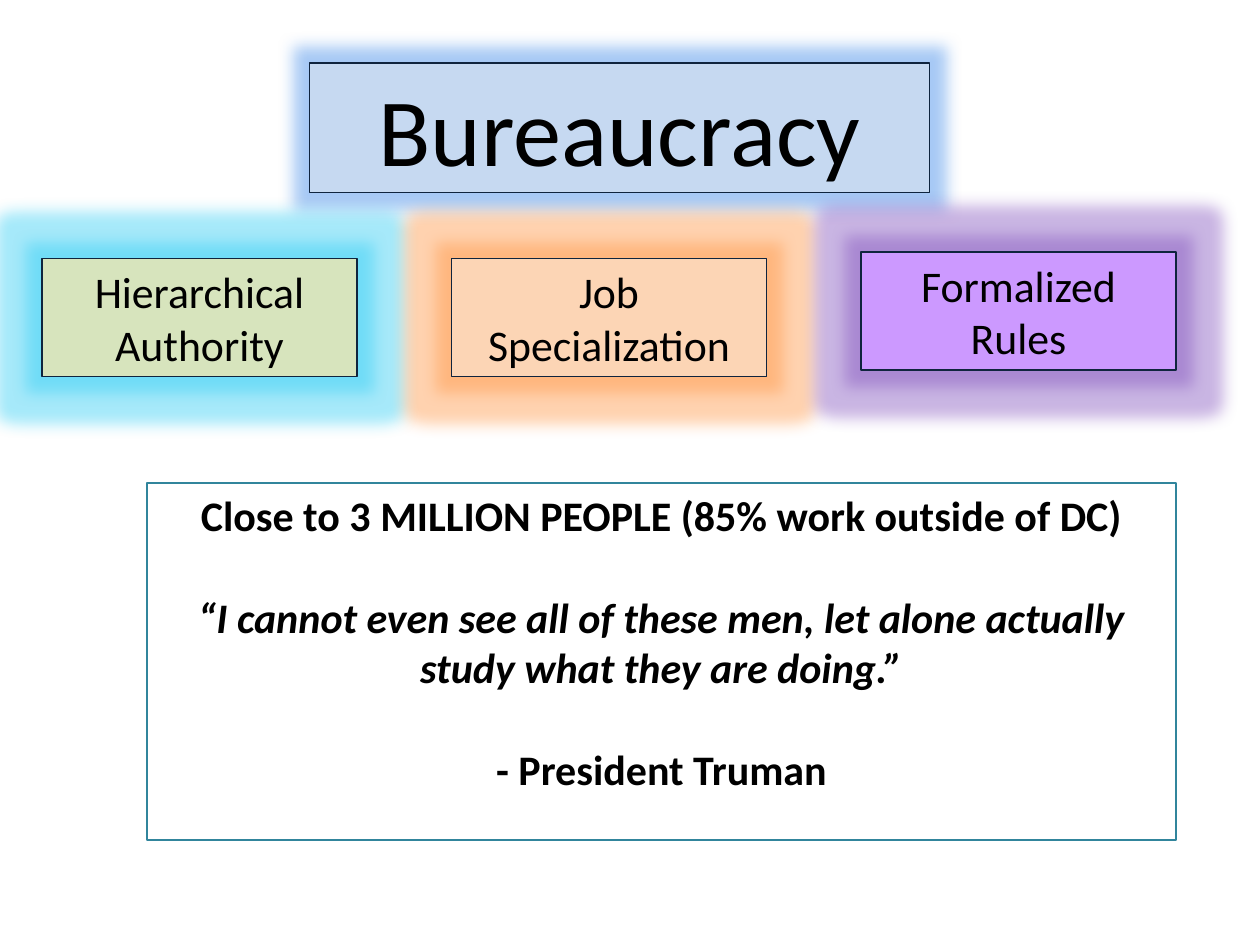
from lxml import etree
from pptx import Presentation
from pptx.dml.color import RGBColor
from pptx.enum import shapes, text
from pptx.oxml import ns
from pptx.util import Pt

# Content: lines of each box, then position, fill and glow
HEADING = dict(lines=["Bureaucracy"], at=(177, 36, 354, 74),
               fill="C6D9F1", glow="257AE6")
TRAITS = [
    dict(lines=["Hierarchical", "Authority"], top=147.6, fill="D7E4BD", glow="21CAF3"),
    dict(lines=["Job Specialization"], top=147.6, fill="FCD5B5", glow="FF8F37"),
    dict(lines=["Formalized Rules"], top=144, fill="CC99FF", glow="7A46B9"),
]
QUOTE = [
    ("Close to 3 MILLION PEOPLE (85% work outside of DC)", False),
    ("“I cannot even see all of these men, let alone actually "
     "study what they are doing.”", True),
    ("- President Truman", False),
]
QUOTE_AT = (84, 276, 588, 204)

TRAIT_LEFT, TRAIT_STEP = 24, 234
TRAIT_SIZE = (180, 67.5)
BLANK_LINE = 29.3
GLOW_RADIUS, GLOW_ALPHA = 18, 40


def rgb(value):
    return RGBColor.from_string(value)


def place(box, at, line, fill=None):
    for side, length in zip(("left", "top", "width", "height"), at):
        setattr(box, side, Pt(length))
    if fill:
        box.fill.solid()
        box.fill.fore_color.rgb = rgb(fill)
    else:
        box.fill.background()
    box.line.color.rgb = rgb(line)
    box.line.width = Pt(0.75)
    box.shadow.inherit = False


def add_glow(box, color):
    effects = box._element.spPr.find(ns.qn("a:effectLst"))
    glow = etree.SubElement(effects, ns.qn("a:glow"), rad=str(Pt(GLOW_RADIUS)))
    tint = etree.SubElement(glow, ns.qn("a:srgbClr"), val=color)
    etree.SubElement(tint, ns.qn("a:alpha"), val=str(GLOW_ALPHA * 1000))


def write(box, lines, anchor, gap=0, **font):
    """Fill a box with centred paragraphs, `gap` points apart."""
    frame = box.text_frame
    frame.word_wrap = True
    frame.auto_size = text.MSO_AUTO_SIZE.NONE
    frame.vertical_anchor = anchor
    frame.text = "\n".join(lines)
    for index, paragraph in enumerate(frame.paragraphs):
        paragraph.alignment = text.PP_ALIGN.CENTER
        paragraph.space_before = Pt(gap if index else 0)
        run_font = paragraph.runs[0].font
        run_font.color.rgb = rgb("000000")
        for name, value in dict(font, name="Calibri").items():
            setattr(run_font, name, value)


deck = Presentation()
deck.slide_width, deck.slide_height = Pt(720), Pt(540)
slide = deck.slides.add_slide(deck.slide_layouts[1])
heading, quote = slide.placeholders

# Heading
place(heading, HEADING["at"], "0F243E", HEADING["fill"])
add_glow(heading, HEADING["glow"])
write(heading, HEADING["lines"], text.MSO_ANCHOR.MIDDLE, size=Pt(55))

# Three traits in a row
for column, trait in enumerate(TRAITS):
    box = slide.shapes.add_shape(shapes.MSO_SHAPE.RECTANGLE, 0, 0, 0, 0)
    at = (TRAIT_LEFT + column * TRAIT_STEP, trait["top"], *TRAIT_SIZE)
    place(box, at, "0F243E", trait["fill"])
    add_glow(box, trait["glow"])
    write(box, trait["lines"], text.MSO_ANCHOR.MIDDLE, size=Pt(25))

# Fact and quotation
place(quote, QUOTE_AT, "31859C")
write(quote, [line for line, _ in QUOTE], text.MSO_ANCHOR.TOP,
      gap=BLANK_LINE, size=Pt(24), bold=True)
for paragraph, (_, italic) in zip(quote.text_frame.paragraphs, QUOTE):
    paragraph.runs[0].font.italic = italic
    properties = paragraph._p.get_or_add_pPr()
    properties.set("marL", "0")
    properties.set("indent", "0")
    etree.SubElement(properties, ns.qn("a:buNone"))

deck.save("out.pptx")
